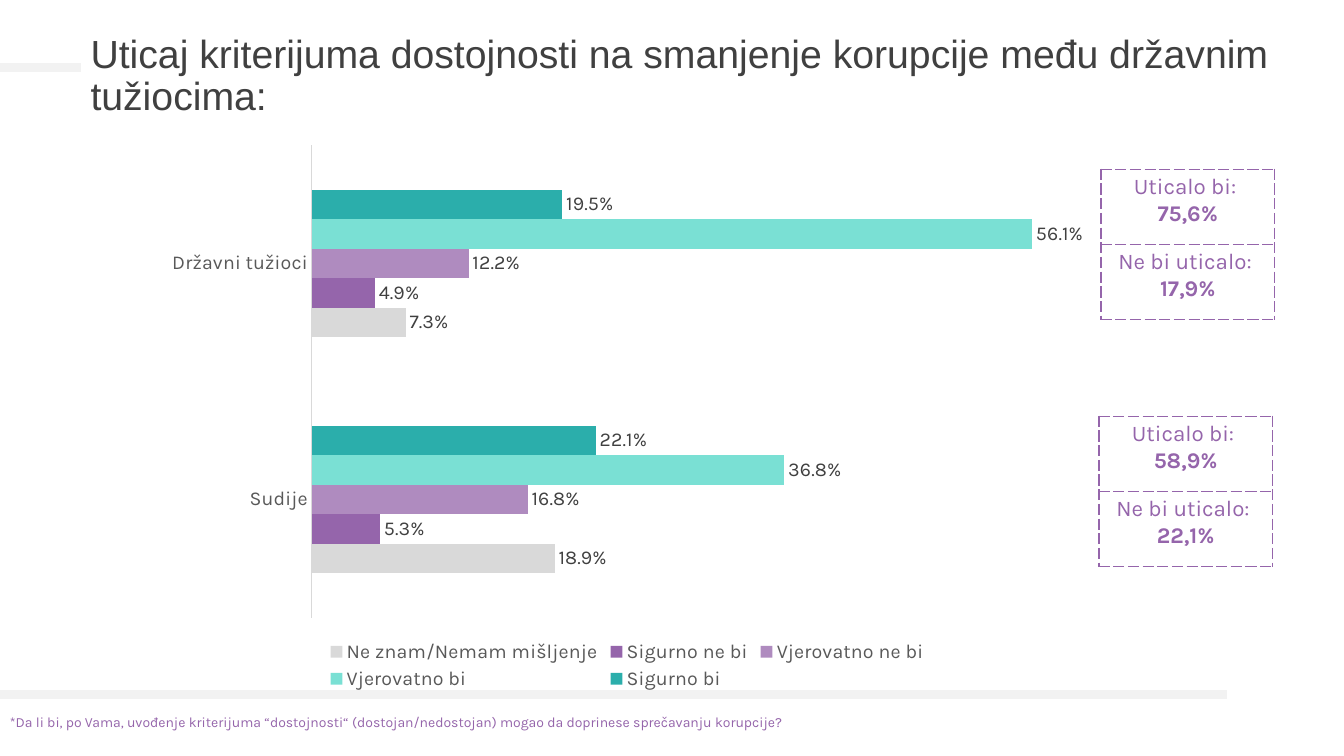
from lxml.etree import SubElement
from pptx import Presentation
from pptx.chart.data import CategoryChartData
from pptx.dml.color import RGBColor
from pptx.enum.chart import XL_CHART_TYPE, XL_LABEL_POSITION, XL_LEGEND_POSITION, XL_TICK_MARK
from pptx.enum.shapes import MSO_CONNECTOR
from pptx.enum.text import MSO_ANCHOR, PP_ALIGN
from pptx.oxml import parse_xml
from pptx.oxml.ns import nsdecls, qn
from pptx.util import Inches, Pt

COLORS = {"rule": "F2F2F2", "title": "404040", "purple": "9565AB",
          "axis": "595959", "line": "D9D9D9", "label": "404040"}
TITLE = "Uticaj kriterijuma dostojnosti na smanjenje korupcije među državnim tužiocima:"
NOTE = ("*Da li bi, po Vama, uvođenje kriterijuma “dostojnosti“ (dostojan/nedostojan) "
        "mogao da doprinese sprečavanju korupcije?")
GROUPS = ["Državni tužioci", "Sudije"]
SERIES = [
    ("Sigurno bi", (0.195, 0.221), "2BAEAB"),
    ("Vjerovatno bi", (0.561, 0.368), "7AE0D4"),
    ("Vjerovatno ne bi", (0.122, 0.168), "AF8BBF"),
    ("Sigurno ne bi", (0.049, 0.053), "9565AB"),
    ("Ne znam/Nemam mišljenje", (0.073, 0.189), "D9D9D9"),
]
ANSWERS = ["Uticalo bi: ", "Ne bi uticalo: "]
TOTALS = [
    (10.92, 1.68, ("75,6%", "17,9%")),
    (10.9, 4.13, ("58,9%", "22,1%")),
]
RULES = [(0.67, 0.8), (6.89, 12.17)]


def rgb(name):
    return RGBColor.from_string(COLORS[name])


def style(font, size, color, face="Karla"):
    font.size = Pt(size)
    font.name = face
    font.color.rgb = rgb(color)


def add_rule(slide, y, end):
    rule = slide.shapes.add_connector(
        MSO_CONNECTOR.STRAIGHT, 0, Inches(y), Inches(end), Inches(y))
    rule.line.color.rgb = rgb("rule")
    rule.line.width = Pt(6)
    SubElement(rule._element.spPr, qn("a:effectLst"))


def add_text(slide, box, text, size, color, face):
    frame = slide.shapes.add_textbox(*map(Inches, box)).text_frame
    frame.word_wrap = True
    par = frame.paragraphs[0]
    par.text = text
    style(par.font, size, color, face)
    return frame


def add_border(cell):
    props = cell._tc.get_or_add_tcPr()
    for spot, side in enumerate(("lnL", "lnR", "lnT", "lnB")):
        props.insert(spot, parse_xml(
            f'<a:{side} {nsdecls("a")} w="12700"><a:solidFill>'
            f'<a:srgbClr val="{COLORS["purple"]}"/></a:solidFill>'
            f'<a:prstDash val="dash"/></a:{side}>'))


def add_totals(slide, left, top, shares):
    table = slide.shapes.add_table(
        2, 1, Inches(left), Inches(top), Inches(1.72), Inches(1.49)).table
    table.first_row = table.horz_banding = False
    for row, (answer, share) in enumerate(zip(ANSWERS, shares)):
        cell = table.cell(row, 0)
        cell.fill.background()
        add_border(cell)
        cell.text = f"{answer}\n{share}"
        for par, bold in zip(cell.text_frame.paragraphs, (False, True)):
            par.alignment = PP_ALIGN.CENTER
            style(par.font, 16, "purple")
            par.font.bold = bold


def add_bars(slide):
    data = CategoryChartData(number_format="0.0%")
    data.categories = GROUPS
    for name, values, color in SERIES:
        data.add_series(name, values)
    chart = slide.shapes.add_chart(
        XL_CHART_TYPE.BAR_CLUSTERED, Inches(1.52), Inches(1.33),
        Inches(9.4), Inches(5.56), data).chart
    chart.has_title = False
    chart.font.size = Pt(14)
    chart.font.name = "Karla"
    chart.has_legend = True
    chart.legend.position = XL_LEGEND_POSITION.BOTTOM
    chart.legend.include_in_layout = False
    style(chart.legend.font, 14, "axis")

    cats = chart.category_axis
    cats.reverse_order = True
    cats.major_tick_mark = XL_TICK_MARK.NONE
    cats.format.line.color.rgb = rgb("line")
    cats.format.line.width = Pt(0.75)
    style(cats.tick_labels.font, 14, "axis")
    scale = chart.value_axis
    scale.visible = False
    scale.has_major_gridlines = False
    scale.minimum_scale = 0
    scale.maximum_scale = 0.6

    plot = chart.plots[0]
    plot.gap_width = 302
    plot.overlap = 0
    plot.vary_by_categories = False
    for bars, (name, values, color) in zip(plot.series, SERIES):
        bars.format.fill.solid()
        bars.format.fill.fore_color.rgb = RGBColor.from_string(color)
        labels = bars.data_labels
        labels.show_value = True
        labels.position = XL_LABEL_POSITION.OUTSIDE_END
        labels.number_format = "0.0%"
        labels.number_format_is_linked = False
        style(labels.font, 14, "label")


def main():
    deck = Presentation()
    deck.slide_width, deck.slide_height = Inches(13.33), Inches(7.5)
    slide = deck.slides.add_slide(deck.slide_layouts[6])
    for y, end in RULES:
        add_rule(slide, y, end)
    head = add_text(slide, (0.8, 0.32, 12.16, 0.88), TITLE, 28, "title", "Arial")
    head.vertical_anchor = MSO_ANCHOR.MIDDLE
    head.paragraphs[0].line_spacing = 0.9
    add_text(slide, (0, 7.03, 11.39, 0.27), NOTE, 10, "purple", "Karla")
    for left, top, shares in TOTALS:
        add_totals(slide, left, top, shares)
    add_bars(slide)
    deck.save("out.pptx")


if __name__ == "__main__":
    main()
